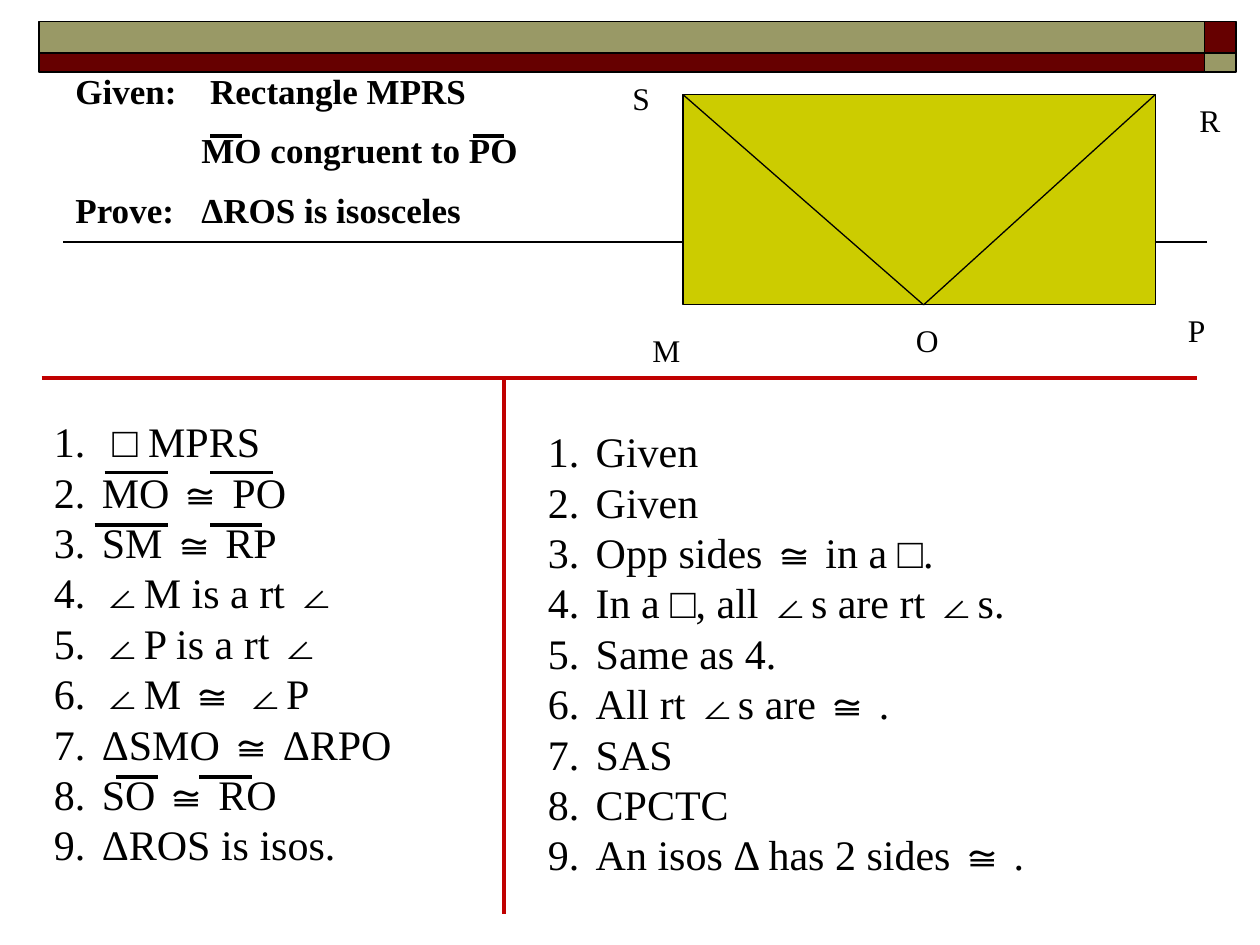
import pptx
import pptx.util
import pptx.dml.color
import pptx.enum.shapes
import pptx.enum.text
import pptx.oxml
import pptx.oxml.ns

Inches, Pt = pptx.util.Inches, pptx.util.Pt

COLORS = {"ink": "000000", "maroon": "660000", "olive": "999966",
          "yellow": "CCCC00", "red": "C00000"}
FONT = "Times New Roman"

PROBLEM = ["Given:\t Rectangle MPRS", "\tMO congruent to PO", "Prove:\tΔROS is isosceles"]
STATEMENTS = [" □ MPRS", "MO ≅ PO", "SM ≅ RP", "∠M is a rt ∠", "∠P is a rt ∠",
              "∠M ≅ ∠P", "ΔSMO ≅ ΔRPO", "SO ≅ RO", "ΔROS is isos."]
REASONS = ["Given", "Given", "Opp sides ≅ in a □.", "In a □, all ∠s are rt ∠s.",
           "Same as 4.", "All rt ∠s are ≅ .", "SAS", "CPCTC", "An isos Δ has 2 sides ≅ ."]
VERTICES = [("R", 9.42, 0.75, 0.33), ("P", 9.33, 2.42, 0.33), ("S", 4.92, 0.58, 0.33),
            ("M", 5.08, 2.58, 0.5), ("O", 7.17, 2.5, 0.33)]
OVERBARS = {1.08: [(1.67, 1.92), (3.75, 4)],
            3.75: [(0.83, 1.33), (1.67, 2.17)],
            4.17: [(0.75, 1.33), (1.67, 2.08)],
            6.17: [(0.92, 1.25), (1.58, 2)]}
BAND_COLUMNS = [(0.31, 9.25), (9.56, 0.25)]
BAND_ROWS = [(0.17, 0.25), (0.42, 0.15)]
RECTANGLE = (5.42, 0.75, 3.75, 1.67)
POINT_O = (7.33, 2.42)

deck = pptx.Presentation()
deck.slide_width, deck.slide_height = Inches(10), Inches(7.5)
slide = deck.slides.add_slide(deck.slide_layouts[6])


def rgb(name):
    return pptx.dml.color.RGBColor.from_string(COLORS[name])


def add_child(parent, tag, **attributes):
    element = parent.makeelement(pptx.oxml.ns.qn(tag), attributes)
    parent.append(element)
    return element


def add_box(left, top, width, height, fill, weight):
    box = slide.shapes.add_shape(pptx.enum.shapes.MSO_SHAPE.RECTANGLE,
                                 Inches(left), Inches(top), Inches(width), Inches(height))
    box.shadow.inherit = False
    box.fill.solid()
    box.fill.fore_color.rgb = rgb(fill)
    box.line.color.rgb = rgb("ink")
    box.line.width = Pt(weight)


def add_line(start, end, color="ink", weight=2.25):
    line = slide.shapes.add_connector(pptx.enum.shapes.MSO_CONNECTOR.STRAIGHT,
                                      *map(Inches, (*start, *end)))
    line.line.color.rgb = rgb(color)
    line.line.width = Pt(weight)
    add_child(line._element.spPr, "a:effectLst")


def add_text(lines, left, top, width, height, size=18, bold=False, numbered=False, tab=None):
    frame = slide.shapes.add_textbox(Inches(left), Inches(top),
                                     Inches(width), Inches(height)).text_frame
    frame.word_wrap = True
    frame.auto_size = pptx.enum.text.MSO_AUTO_SIZE.SHAPE_TO_FIT_TEXT
    for index, line in enumerate(lines):
        paragraph = frame.paragraphs[0] if index == 0 else frame.add_paragraph()
        run = paragraph.add_run()
        run.text = line
        run.font.name, run.font.size, run.font.bold = FONT, Pt(size), bold
        run.font.color.rgb = rgb("ink")
        properties = paragraph._p.get_or_add_pPr()
        if numbered:
            properties.set("marL", str(Inches(0.38)))
            properties.set("indent", str(Inches(-0.38)))
            add_child(properties, "a:buFont", typeface=FONT)
            add_child(properties, "a:buAutoNum", type="arabicPeriod")
        else:
            add_child(add_child(properties, "a:spcBef"), "a:spcPct", val="50000")
        if tab:
            add_child(add_child(properties, "a:tabLst"), "a:tab",
                      pos=str(Inches(tab)), algn="l")


add_line((9.58, 1.92), (0.5, 1.92), weight=1)
for row, (top, height) in enumerate(BAND_ROWS):
    for column, (left, width) in enumerate(BAND_COLUMNS):
        fill = "olive" if row == column else "maroon"
        if row == column == 0 or row == column == 1:
            fill = "olive"
        add_box(left, top, width, height, fill, 1)

add_box(*RECTANGLE, "yellow", 0.75)
left, top, width, height = RECTANGLE
for corner in (left, left + width):
    add_line((corner, top), POINT_O, weight=0.75)
for vertex, left, top, width in VERTICES:
    add_text([vertex], left, top, width, 0.4)

add_text(PROBLEM, 0.5, 0.5, 8.42, 1.43, size=20, bold=True, tab=1)
add_line((0.33, 3), (9.5, 3), color="red")
add_line((4, 3), (4, 7.25), color="red")
add_text(STATEMENTS, 0.33, 3.25, 3.58, 3.74, size=24, numbered=True)
add_text(REASONS, 4.25, 3.33, 5.17, 3.74, size=24, numbered=True)
for height, bars in OVERBARS.items():
    for start, end in bars:
        add_line((start, height), (end, height))

deck.save("out.pptx")
